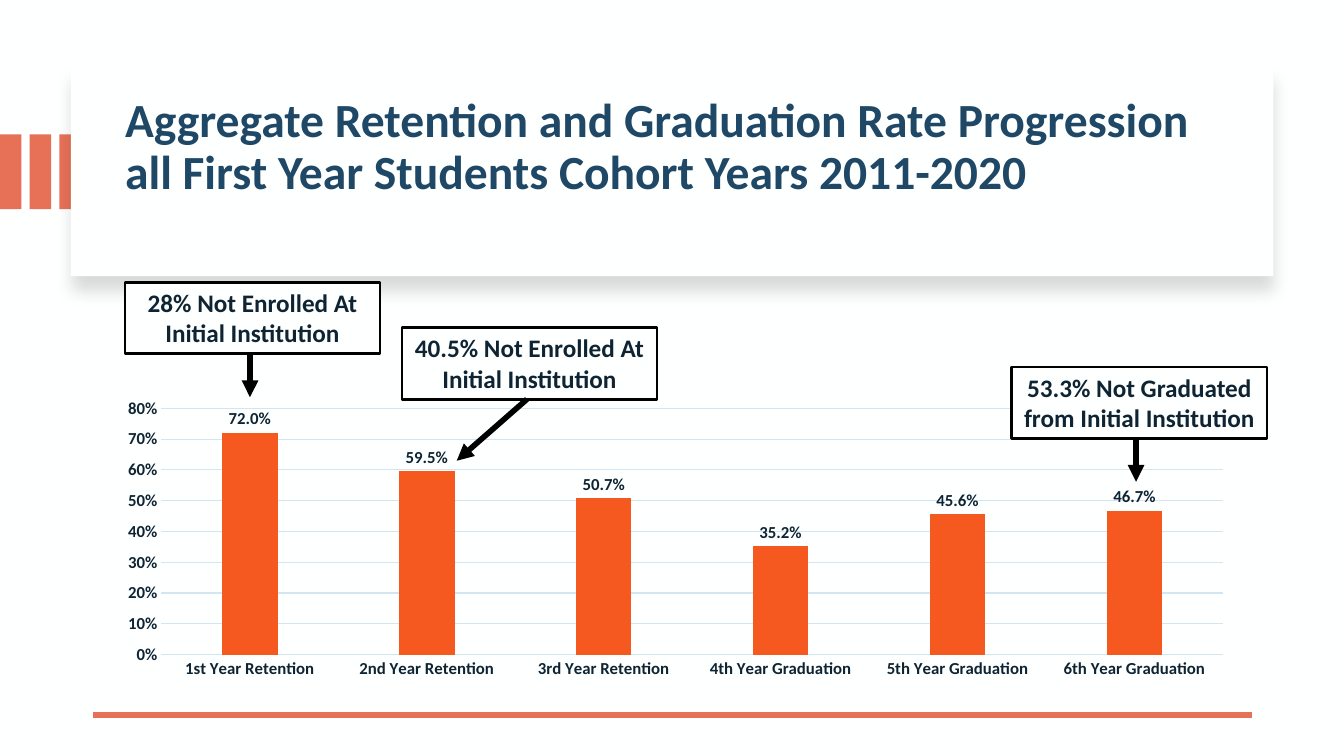
from lxml import etree
from pptx import Presentation
from pptx.chart.data import CategoryChartData
from pptx.dml.color import RGBColor
from pptx.enum.chart import XL_CHART_TYPE, XL_LABEL_POSITION, XL_TICK_MARK
from pptx.enum.shapes import MSO_CONNECTOR, MSO_SHAPE
from pptx.enum.text import MSO_ANCHOR, PP_ALIGN
from pptx.oxml import parse_xml
from pptx.oxml.ns import nsdecls, qn
from pptx.util import Cm, Pt

COLUMN = XL_CHART_TYPE.COLUMN_CLUSTERED
OUTSIDE_END = XL_LABEL_POSITION.OUTSIDE_END
NO_TICK = XL_TICK_MARK.NONE
RECTANGLE = MSO_SHAPE.RECTANGLE
STRAIGHT = MSO_CONNECTOR.STRAIGHT

FONT = "Calibri"
PAPER, CORAL, ORANGE = "FEFFFF", "E67157", "F55920"
NAVY, INK, BLACK, GRID = "1F4766", "0F2433", "000000", "D4E5F2"


def paint(color_format, color):
    color_format.rgb = RGBColor.from_string(color)


def style_font(font, size, color):
    font.name, font.size, font.bold = FONT, Pt(size), True
    paint(font.color, color)


prs = Presentation()
prs.slide_width, prs.slide_height = Cm(33.87), Cm(19.05)
slide = prs.slides.add_slide(prs.slide_layouts[5])
shapes = slide.shapes
slide.background.fill.solid()
paint(slide.background.fill.fore_color, PAPER)

# Stripes at the left edge and the title card
panels = [(0.75 * i, 3.39, 0.54, 1.88, CORAL) for i in range(3)]
panels.append((1.79, 1.7, 30.3, 5.26, PAPER))
for left, top, width, height, color in panels:
    panel = shapes.add_shape(RECTANGLE, Cm(left), Cm(top), Cm(width), Cm(height))
    panel.shadow.inherit = False
    panel.fill.solid()
    paint(panel.fill.fore_color, color)
    panel.line.fill.background()

# Soft shadow under the card, which is the last panel
card_effects = panel._element.spPr.find(qn("a:effectLst"))
card_effects.append(parse_xml(
    f'<a:outerShdw {nsdecls("a")} blurRad="{Pt(11)}" dist="{Pt(10)}" dir="5400000" '
    'algn="t" rotWithShape="0"><a:srgbClr val="000000"><a:alpha val="15000"/>'
    '</a:srgbClr></a:outerShdw>'))

# Title, brought in front of the card
title = shapes.title
title.left, title.top, title.width, title.height = Cm(2.9), Cm(2.26), Cm(28.27), Cm(4.32)
title_frame = title.text_frame
title_frame.text = ("Aggregate Retention and Graduation Rate Progression "
                    "all First Year Students Cohort Years 2011-2020")
title_frame.word_wrap = True
title_frame.vertical_anchor = MSO_ANCHOR.TOP
title_frame.margin_top = Cm(0.18)
heading = title_frame.paragraphs[0]
heading.alignment = PP_ALIGN.LEFT
heading.line_spacing = 0.9
style_font(heading.runs[0].font, 34, NAVY)
shapes._spTree.append(title._element)

# Rates chart
rates = CategoryChartData(number_format="0.0%")
rates.categories = ["1st Year Retention", "2nd Year Retention", "3rd Year Retention",
                    "4th Year Graduation", "5th Year Graduation", "6th Year Graduation"]
rates.add_series("Series 1", [0.72, 0.595, 0.507, 0.352, 0.456, 0.467])
chart = shapes.add_chart(COLUMN, Cm(2.51), Cm(8.38), Cm(28.83), Cm(8.92), rates).chart
chart.has_legend = False
chart.has_title = False
style_font(chart.font, 12, INK)

plot = chart.plots[0]
plot.gap_width, plot.overlap = 219, -27
plot.vary_by_categories = False
bars = plot.series[0]
bars.format.fill.solid()
paint(bars.format.fill.fore_color, ORANGE)
labels = bars.data_labels
labels.show_value = True
labels.position = OUTSIDE_END
labels.number_format, labels.number_format_is_linked = "0.0%", False
style_font(labels.font, 12, INK)

years, percent = chart.category_axis, chart.value_axis
for axis in (years, percent):
    axis.major_tick_mark = axis.minor_tick_mark = NO_TICK
    style_font(axis.tick_labels.font, 12, INK)
percent.minimum_scale, percent.maximum_scale, percent.major_unit = 0, 0.8, 0.1
percent.tick_labels.number_format = "0%"
percent.tick_labels.number_format_is_linked = False
percent.format.line.fill.background()
for rule in (years.format.line, percent.major_gridlines.format.line):
    paint(rule.color, GRID)
    rule.width = Pt(0.75)

# Fixed inner plot area
plot_area = chart._chartSpace.chart.plotArea
for old_layout in plot_area.findall(qn("c:layout")):
    plot_area.remove(old_layout)
plot_area.insert(0, parse_xml(
    f'<c:layout {nsdecls("c")}><c:manualLayout><c:layoutTarget val="inner"/>'
    '<c:xMode val="edge"/><c:yMode val="edge"/><c:x val="0.054"/><c:y val="0.214"/>'
    '<c:w val="0.928"/><c:h val="0.696"/></c:manualLayout></c:layout>'))

# Callout boxes: text, left, top, arrow start x, arrow tip
BOX_WIDTH, BOX_HEIGHT = 6.43, 1.8
callouts = [
    ("40.5% Not Enrolled At Initial Institution", 10.13, 8.26, 13.28, 11.51, 11.61),
    ("53.3% Not Graduated from Initial Institution", 25.5, 9.25, 28.63, 28.63, 12.14),
    ("28% Not Enrolled At Initial Institution", 3.15, 7.11, 6.3, 6.3, 10.01),
]
lines = [(31.55, 18.01, 2.34, 18.01, CORAL, 4.5, False)]  # footer rule
for message, left, top, start_x, tip_x, tip_y in callouts:
    box = shapes.add_shape(RECTANGLE, Cm(left), Cm(top), Cm(BOX_WIDTH), Cm(BOX_HEIGHT))
    box.shadow.inherit = False
    box.fill.solid()
    paint(box.fill.fore_color, PAPER)
    paint(box.line.color, BLACK)
    box.line.width = Pt(2)
    box.text_frame.text = message
    box.text_frame.word_wrap = True
    box.text_frame.vertical_anchor = MSO_ANCHOR.TOP
    note = box.text_frame.paragraphs[0]
    note.alignment = PP_ALIGN.CENTER
    style_font(note.runs[0].font, 18, INK)
    lines.append((tip_x, tip_y, start_x, top + BOX_HEIGHT, BLACK, 4, True))

# Footer rule and callout arrows
for x1, y1, x2, y2, color, weight, has_head in lines:
    line = shapes.add_connector(STRAIGHT, Cm(x1), Cm(y1), Cm(x2), Cm(y2))
    paint(line.line.color, color)
    line.line.width = Pt(weight)
    if has_head:
        etree.SubElement(line.line._get_or_add_ln(), qn("a:headEnd"), type="triangle")
    etree.SubElement(line._element.spPr, qn("a:effectLst"))

prs.save("out.pptx")
